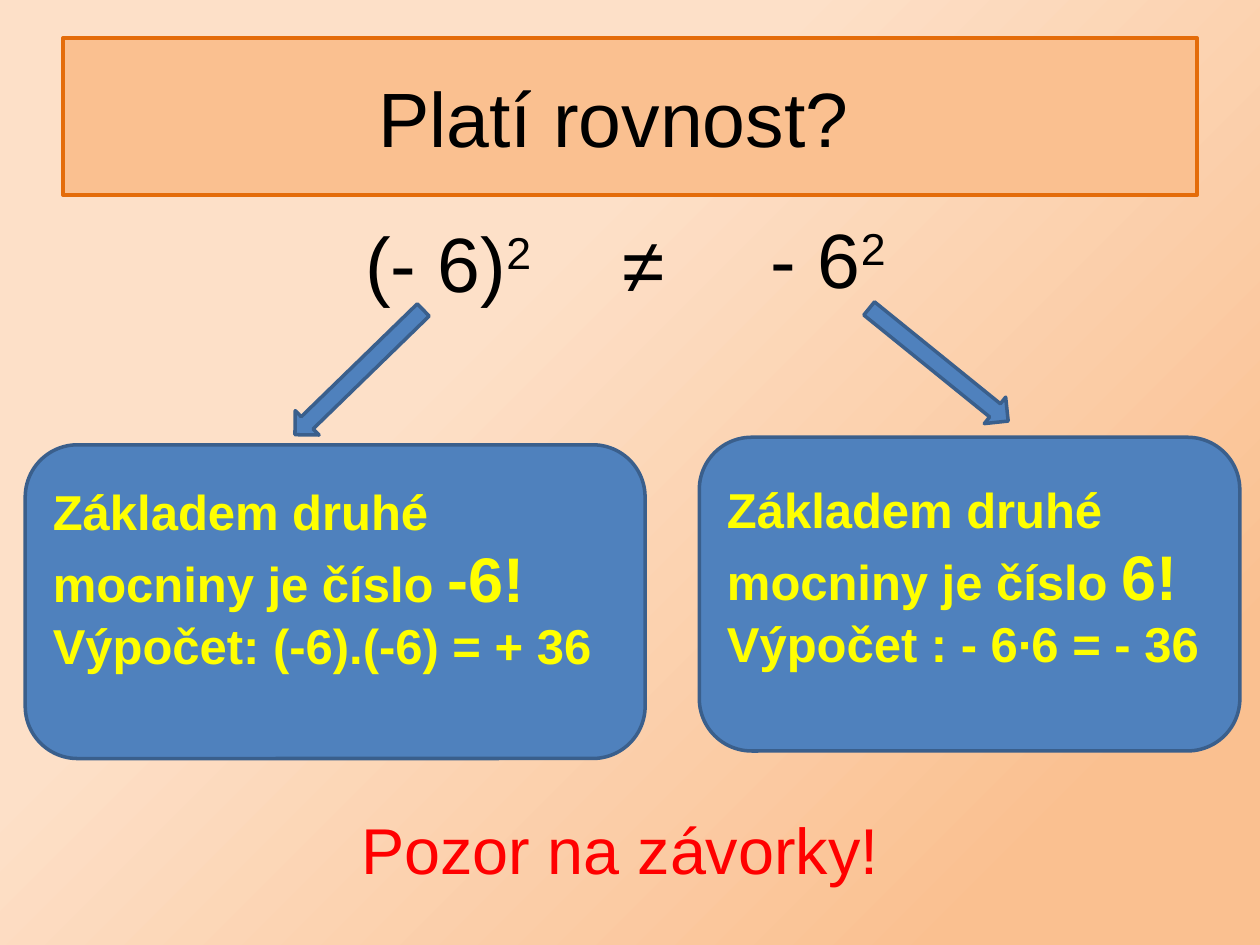
from pptx import Presentation
from pptx.dml.color import RGBColor
from pptx.enum.shapes import MSO_SHAPE
from pptx.enum.text import MSO_ANCHOR, PP_ALIGN
from pptx.util import Inches, Pt
from lxml import etree

ROUND, ARROW = MSO_SHAPE.ROUNDED_RECTANGLE, MSO_SHAPE.RIGHT_ARROW
MIDDLE, LEFT, CENTER = MSO_ANCHOR.MIDDLE, PP_ALIGN.LEFT, PP_ALIGN.CENTER
A = "{http://schemas.openxmlformats.org/drawingml/2006/main}"
BLUE, EDGE = "4F81BD", "3A5F8C"

deck = Presentation()
deck.slide_width, deck.slide_height = Inches(10), Inches(7.5)
slide = deck.slides.add_slide(deck.slide_layouts[1])
shapes = slide.shapes


def paint(shape, fill, line):
    shape.fill.solid()
    shape.fill.fore_color.rgb = RGBColor.from_string(fill)
    shape.line.color.rgb = RGBColor.from_string(line)
    shape.line.width = Pt(2)
    shape.shadow.inherit = False


def style(par, size, color, align=LEFT, bold=False):
    par.alignment = align
    for run in par.runs:
        font = run.font
        font.name, font.size, font.bold = "Arial", Pt(size), bold
        font.color.rgb = RGBColor.from_string(color)


# Background
back = slide.background.fill
back.gradient()
back.gradient_angle = 315
for stop, (pos, color) in zip(back.gradient_stops, [(0.36, "FDE0C8"), (0.86, "FAC090")]):
    stop.position = pos
    stop.color.rgb = RGBColor.from_string(color)

# Title
title = shapes.title
title.left, title.top, title.width, title.height = map(Inches, (0.5, 0.3, 9, 1.25))
paint(title, "FAC090", "E46C0A")
frame = title.text_frame
frame.text = "Platí rovnost?"
frame.vertical_anchor = MIDDLE
frame.margin_right = Inches(0.36)
style(frame.paragraphs[0], 44, "000000", CENTER)

# Explanations: place, base, sum, room below the text
cards = [
    ((5.55, 3.47, 4.29, 2.49), "6!", "Výpočet : - 6∙6 = - 36", 0.34),
    ((0.2, 3.53, 4.92, 2.49), "-6!", "Výpočet: (-6).(-6) = + 36", 0.43),
]
for place, base, total, room in cards:
    card = shapes.add_shape(ROUND, *map(Inches, place))
    paint(card, BLUE, EDGE)
    frame = card.text_frame
    frame.word_wrap = True
    frame.vertical_anchor = MIDDLE
    frame.margin_bottom = Inches(room)
    frame.text = f"Základem druhé\nmocniny je číslo \n{total}"
    frame.paragraphs[1].add_run().text = base
    for par in frame.paragraphs:
        style(par, 28, "FFFF00", bold=True)
    frame.paragraphs[1].runs[1].font.size = Pt(36)

# Arrows from the powers to the explanations
for left, top, turn in [(2.14, 2.82, 135.8), (6.74, 2.76, 39)]:
    arrow = shapes.add_shape(ARROW, *map(Inches, (left, top, 1.42, 0.27)))
    arrow.rotation = turn
    paint(arrow, BLUE, EDGE)

# Warning
body = slide.placeholders[1]
body.left, body.top, body.width, body.height = map(Inches, (0.42, 6.38, 9, 0.68))
body.text_frame.text = "Pozor na závorky!"
par = body.text_frame.paragraphs[0]
style(par, 37, "FF0000", CENTER)
props = par._p.get_or_add_pPr()
props.set("marL", "0")
props.set("indent", "0")
etree.SubElement(props, A + "buNone")

# Powers: place, text, exponent
powers = [
    ((2.8, 1.66, 1.68, 0.84), "(- 6)", "2"),
    ((4.84, 1.67, 0.54, 0.84), "≠", ""),
    ((6.02, 1.63, 2.5, 0.84), "- 6", "2"),
]
for place, text, power in powers:
    box = shapes.add_textbox(*map(Inches, place))
    box.text_frame.text = text
    par = box.text_frame.paragraphs[0]
    if power:
        run = par.add_run()
        run.text = power
        run._r.get_or_add_rPr().set("baseline", "30000")
    style(par, 44, "000000")

deck.save("out.pptx")
